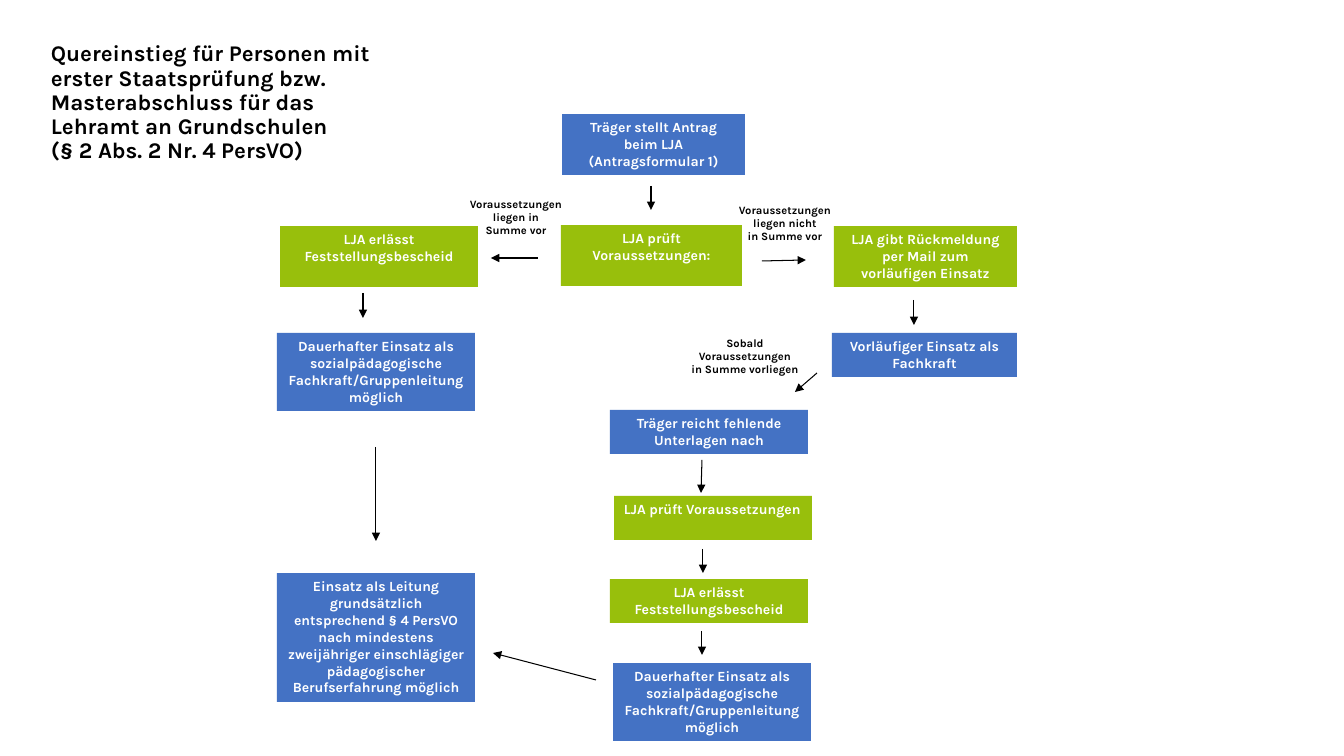
from dataclasses import dataclass
from lxml.etree import SubElement
from pptx import Presentation
from pptx.dml.color import RGBColor
from pptx.enum.shapes import MSO_CONNECTOR, MSO_SHAPE
from pptx.enum.text import MSO_ANCHOR, MSO_AUTO_SIZE, PP_ALIGN
from pptx.oxml.ns import qn
from pptx.util import Emu, Pt

EMU_PER_PX = 914400 / 100.8


@dataclass(frozen=True)
class Theme:
    font: str = "Karla"
    black: RGBColor = RGBColor(0x00, 0x00, 0x00)
    white: RGBColor = RGBColor(0xFF, 0xFF, 0xFF)
    blue: RGBColor = RGBColor(0x44, 0x72, 0xC4)
    green: RGBColor = RGBColor(0x98, 0xBF, 0x0C)
    title_size: int = 16
    step_size: int = 10
    label_size: int = 8
    arrow_width: float = 0.75


THEME = Theme()


@dataclass(frozen=True)
class Step:
    left: int
    top: int
    width: int
    height: int
    fill: RGBColor
    text: str
    align: PP_ALIGN = PP_ALIGN.CENTER


@dataclass(frozen=True)
class Label:
    left: int
    top: int
    text: str


@dataclass(frozen=True)
class Arrow:
    start_x: int
    start_y: int
    end_x: int
    end_y: int


TITLE = ("Quereinstieg für Personen mit erster Staatsprüfung bzw. Masterabschluss "
         "für das Lehramt an Grundschulen\v(§ 2 Abs. 2 Nr. 4 PersVO)")
PERMANENT = "Dauerhafter Einsatz als sozialpädagogische Fachkraft/Gruppenleitung möglich"
NOTICE = "LJA erlässt Feststellungsbescheid"
LABEL_WIDTH, LABEL_HEIGHT = 146, 50

STEPS = [
    # Application and check
    Step(562, 114, 183, 61, THEME.blue,
         "Träger stellt Antrag beim LJA\n(Antragsformular 1)"),
    Step(561, 225, 181, 61, THEME.green, "LJA prüft Voraussetzungen:"),
    # Requirements met
    Step(280, 226, 198, 61, THEME.green, NOTICE),
    Step(277, 333, 198, 78, THEME.blue, PERMANENT),
    Step(277, 573, 198, 129, THEME.blue,
         "Einsatz als Leitung grundsätzlich entsprechend § 4 PersVO nach mindestens "
         "zweijähriger einschlägiger pädagogischer Berufserfahrung möglich"),
    # Requirements not yet met
    Step(834, 226, 183, 61, THEME.green,
         "LJA gibt Rückmeldung per Mail zum vorläufigen Einsatz"),
    Step(832, 333, 185, 44, THEME.blue, "Vorläufiger Einsatz als Fachkraft"),
    Step(610, 410, 198, 44, THEME.blue, "Träger reicht fehlende Unterlagen nach"),
    Step(614, 496, 198, 44, THEME.green, "LJA prüft Voraussetzungen", PP_ALIGN.LEFT),
    Step(610, 579, 198, 44, THEME.green, NOTICE),
    Step(613, 663, 198, 78, THEME.blue, PERMANENT),
]

LABELS = [
    Label(712, 198, "Voraussetzungen liegen nicht\nin Summe vor"),
    Label(443, 192, "Voraussetzungen liegen in\nSumme vor"),
    Label(672, 331, "Sobald Voraussetzungen\nin Summe vorliegen"),
]

ARROWS = [
    Arrow(651, 186, 651, 210),
    Arrow(538, 258, 491, 258),
    Arrow(762, 261, 806, 260),
    Arrow(363, 293, 363, 318),
    Arrow(376, 447, 376, 541),
    Arrow(914, 300, 914, 325),
    Arrow(817, 373, 795, 392),
    Arrow(702, 460, 701, 493),
    Arrow(703, 549, 703, 573),
    Arrow(702, 631, 702, 655),
    Arrow(596, 680, 493, 653),
]


def px(*lengths: int) -> list[Emu]:
    return [Emu(round(length * EMU_PER_PX)) for length in lengths]


def write_text(shape, text: str, size: int, color: RGBColor, align: PP_ALIGN,
               anchor: MSO_ANCHOR = MSO_ANCHOR.TOP,
               auto_size: MSO_AUTO_SIZE = MSO_AUTO_SIZE.SHAPE_TO_FIT_TEXT,
               line_spacing: float = 1.0) -> None:
    frame = shape.text_frame
    frame_format = {"word_wrap": True, "auto_size": auto_size, "vertical_anchor": anchor}
    for name, value in frame_format.items():
        setattr(frame, name, value)
    frame.text = text
    font_format = {"name": THEME.font, "size": Pt(size), "bold": True}
    for paragraph in frame.paragraphs:
        paragraph.alignment = align
        paragraph.line_spacing = line_spacing
        for run in paragraph.runs:
            for name, value in font_format.items():
                setattr(run.font, name, value)
            run.font.color.rgb = color


def draw_title(slide) -> None:
    shape = slide.shapes.add_textbox(*px(41, 36, 371, 134))
    write_text(shape, TITLE, THEME.title_size, THEME.black, PP_ALIGN.LEFT,
               MSO_ANCHOR.MIDDLE, MSO_AUTO_SIZE.NONE, 0.9)


def draw_step(slide, step: Step) -> None:
    shape = slide.shapes.add_shape(
        MSO_SHAPE.RECTANGLE, *px(step.left, step.top, step.width, step.height))
    shape.shadow.inherit = False
    shape.fill.solid()
    shape.fill.fore_color.rgb = step.fill
    shape.line.fill.background()
    write_text(shape, step.text, THEME.step_size, THEME.white, step.align)


def draw_label(slide, label: Label) -> None:
    shape = slide.shapes.add_textbox(
        *px(label.left, label.top, LABEL_WIDTH, LABEL_HEIGHT))
    write_text(shape, label.text, THEME.label_size, THEME.black, PP_ALIGN.CENTER)


def draw_arrow(slide, arrow: Arrow) -> None:
    connector = slide.shapes.add_connector(
        MSO_CONNECTOR.STRAIGHT,
        *px(arrow.start_x, arrow.start_y, arrow.end_x, arrow.end_y))
    connector.line.color.rgb = THEME.black
    connector.line.width = Pt(THEME.arrow_width)
    properties = connector._element.spPr
    SubElement(properties.find(qn("a:ln")), qn("a:tailEnd"), type="triangle")
    SubElement(properties, qn("a:effectLst"))


def main() -> None:
    presentation = Presentation()
    presentation.slide_width, presentation.slide_height = px(1344, 756)
    slide = presentation.slides.add_slide(presentation.slide_layouts[6])
    draw_title(slide)
    for step in STEPS:
        draw_step(slide, step)
    for label in LABELS:
        draw_label(slide, label)
    for arrow in ARROWS:
        draw_arrow(slide, arrow)
    presentation.save("out.pptx")


if __name__ == "__main__":
    main()
